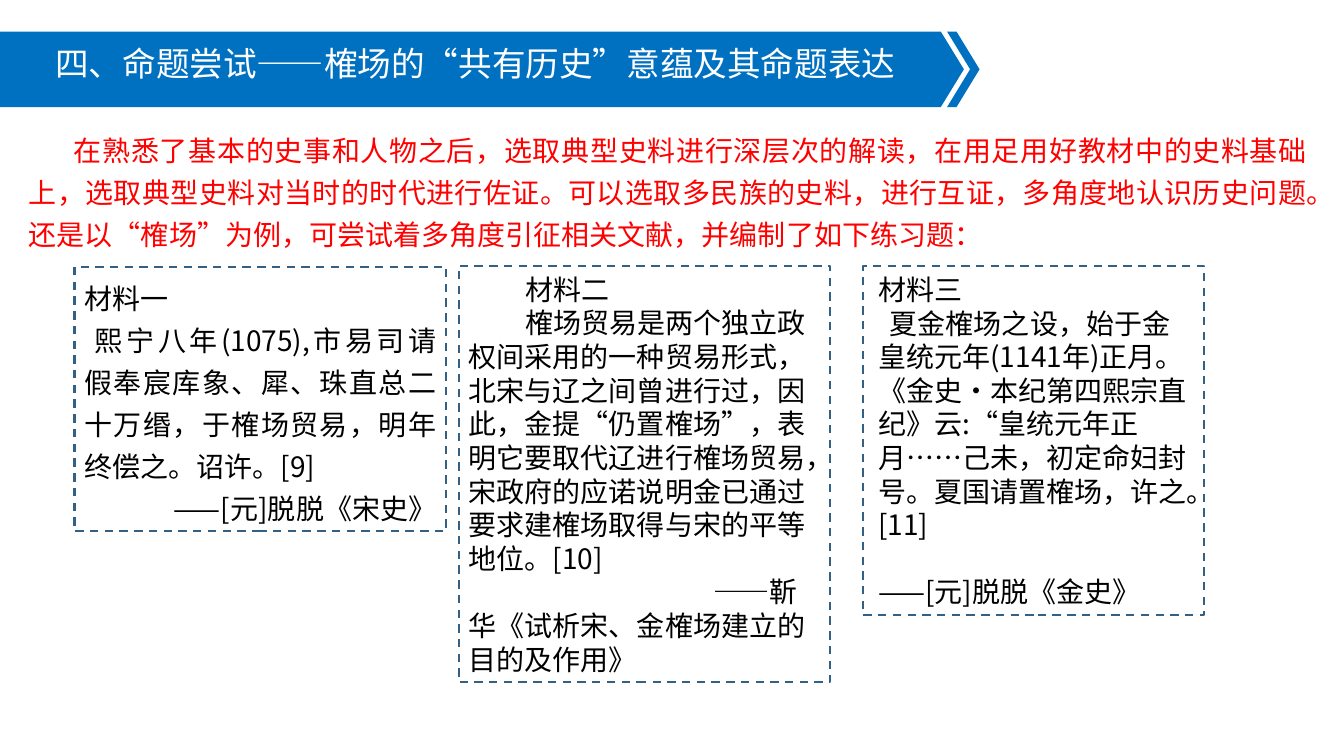
from pptx import Presentation
from pptx import util as u
from pptx.dml.color import RGBColor
from pptx.enum import dml, lang, shapes, text
from pptx.oxml.ns import qn

PX = 9525
FONT = "Noto Sans CJK SC"
BLUE, BORDER, RED, BLACK, WHITE = "0070C0", "326185", "FF0000", "000000", "FFFFFF"
LEFT, RIGHT, JUSTIFY = (
    text.PP_ALIGN.LEFT, text.PP_ALIGN.RIGHT, text.PP_ALIGN.JUSTIFY)

TITLE = "四、命题尝试——榷场的“共有历史”意蕴及其命题表达"
INTRO = ("在熟悉了基本的史事和人物之后，选取典型史料进行深层次的解读，在用足用好教材中的史料基础上，"
         "选取典型史料对当时的时代进行佐证。可以选取多民族的史料，进行互证，多角度地认识历史问题。"
         "还是以“榷场”为例，可尝试着多角度引征相关文献，并编制了如下练习题：")
MATERIALS = [
    ((71, 254, 354, 252), [
        ("材料一", dict(align=JUSTIFY, spacing=1.25)),
        ("熙宁八年(1075),市易司请假奉宸库象、犀、珠直总二十万缗，于榷场贸易，明年终偿之。诏许。[9]",
         dict(align=JUSTIFY, spacing=1.25, indent=10)),
        ("——[元]脱脱《宋史》", dict(align=RIGHT, spacing=1.25)),
    ]),
    ((437, 253, 354, 397), [
        ("材料二", dict(indent=54)),
        ("榷场贸易是两个独立政权间采用的一种贸易形式，北宋与辽之间曾进行过，因此，金提“仍置榷场”，"
         "表明它要取代辽进行榷场贸易，宋政府的应诺说明金已通过要求建榷场取得与宋的平等地位。[10]",
         dict(indent=54)),
        ("——靳华《试析宋、金榷场建立的目的及作用》", dict(indent=233)),
    ]),
    ((822, 253, 325, 333), [
        ("材料三", dict(margin=5)),
        ("夏金榷场之设，始于金皇统元年(1141年)正月。《金史·本纪第四熙宗直纪》云:“皇统元年正月……"
         "己未，初定命妇封号。夏国请置榷场，许之。[11]", dict(margin=5, indent=11)),
        ("——[元]脱脱《金史》", dict(margin=5, before=24)),
    ]),
]


def color(value):
    """Turn a hex string into a colour."""
    return RGBColor.from_string(value)


def place(shape, box):
    """Move a shape to a box given in px."""
    shape.left, shape.top, shape.width, shape.height = (n * PX for n in box)


def prepare_frame(shape, anchor=text.MSO_ANCHOR.TOP):
    """Set wrapping, fitting and anchor of a shape's text."""
    frame = shape.text_frame
    frame.word_wrap = True
    frame.auto_size = text.MSO_AUTO_SIZE.NONE
    frame.vertical_anchor = anchor
    return frame


def write(paragraph, words, size=20, ink=BLACK, align=LEFT, spacing=1.0,
          margin=0, indent=0, before=0):
    """Fill one paragraph with formatted text."""
    paragraph.alignment = align
    paragraph.line_spacing = spacing
    paragraph.space_before = u.Pt(before)
    properties = paragraph._p.get_or_add_pPr()
    properties.set("marL", str(margin * PX))
    properties.set("indent", str(indent * PX))
    run = paragraph.add_run()
    run.text = words
    run.font.size = u.Pt(size)
    run.font.name = FONT
    run.font.color.rgb = color(ink)
    run.font.language_id = lang.MSO_LANGUAGE_ID.SIMPLIFIED_CHINESE
    east_asian = run._r.get_or_add_rPr().makeelement(qn("a:ea"), {"typeface": FONT})
    run.font._element.find(qn("a:latin")).addnext(east_asian)


def add_outline(slide, points):
    """Draw a closed blue outline through points in px."""
    builder = slide.shapes.build_freeform(*points[0], scale=PX)
    builder.add_line_segments(points[1:], close=True)
    shape = builder.convert_to_shape()
    shape.shadow.inherit = False
    shape.fill.solid()
    shape.fill.fore_color.rgb = color(BLUE)
    shape.line.fill.background()


def add_banner(slide, box):
    """Draw the arrow banner with its chevron and the title."""
    left, top, width, height = box
    right, middle, bottom = left + width, top + height // 2, top + height
    point, gap, stripe = 22, 6, 9
    shoulder = right - point
    add_outline(slide, [(left, top), (shoulder, top), (right, middle),
                        (shoulder, bottom), (left, bottom)])
    inner = shoulder + gap
    outer = inner + stripe
    add_outline(slide, [(inner, top), (outer, top), (outer + point, middle),
                        (outer, bottom), (inner, bottom), (inner + point, middle)])
    title = slide.shapes.title
    place(title, (left + 43, top + 6, 1141, 93))
    write(prepare_frame(title).paragraphs[0], TITLE, size=24, ink=WHITE)
    title.element.getparent().append(title.element)


def add_intro(slide, box):
    """Write the red introduction."""
    shape = slide.shapes.add_textbox(*(n * PX for n in box))
    write(prepare_frame(shape).paragraphs[0], INTRO, ink=RED,
          align=JUSTIFY, spacing=1.25, indent=43)


def add_material(slide, box, paragraphs):
    """Draw one dashed card with its source text."""
    card = slide.shapes.add_shape(
        shapes.MSO_SHAPE.RECTANGLE, *(n * PX for n in box))
    card.shadow.inherit = False
    card.fill.background()
    card.line.color.rgb = color(BORDER)
    card.line.width = u.Pt(1.5)
    card.line.dash_style = dml.MSO_LINE.DASH
    frame = prepare_frame(card, text.MSO_ANCHOR.MIDDLE)
    for index, (words, style) in enumerate(paragraphs):
        paragraph = frame.add_paragraph() if index else frame.paragraphs[0]
        write(paragraph, words, **style)


def main():
    """Build and save the slide."""
    presentation = Presentation()
    presentation.slide_width, presentation.slide_height = 1280 * PX, 720 * PX
    slide = presentation.slides.add_slide(presentation.slide_layouts[5])
    add_banner(slide, (0, 30, 918, 72))
    add_intro(slide, (18, 114, 1236, 150))
    for box, paragraphs in MATERIALS:
        add_material(slide, box, paragraphs)
    presentation.save("out.pptx")


if __name__ == "__main__":
    main()
